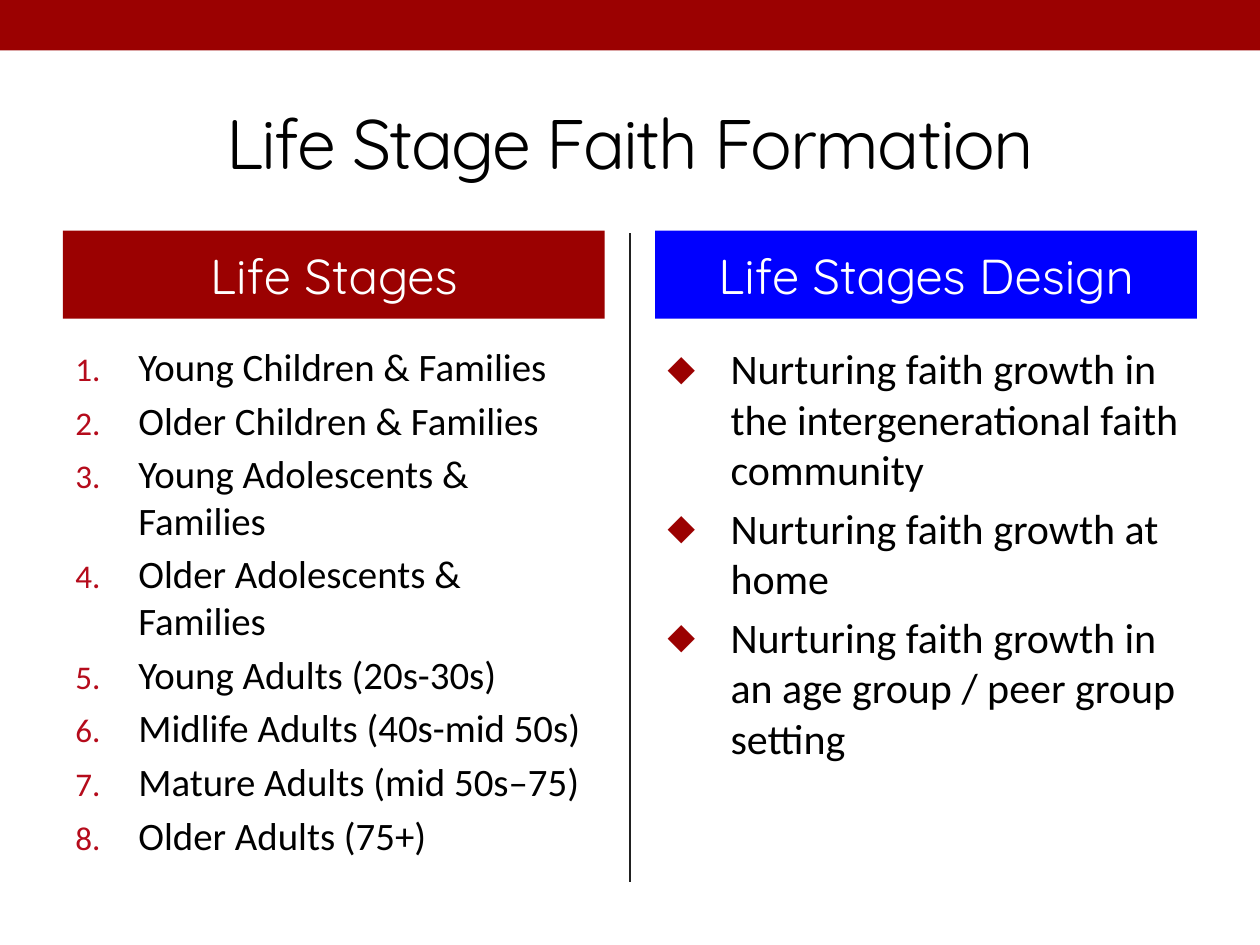
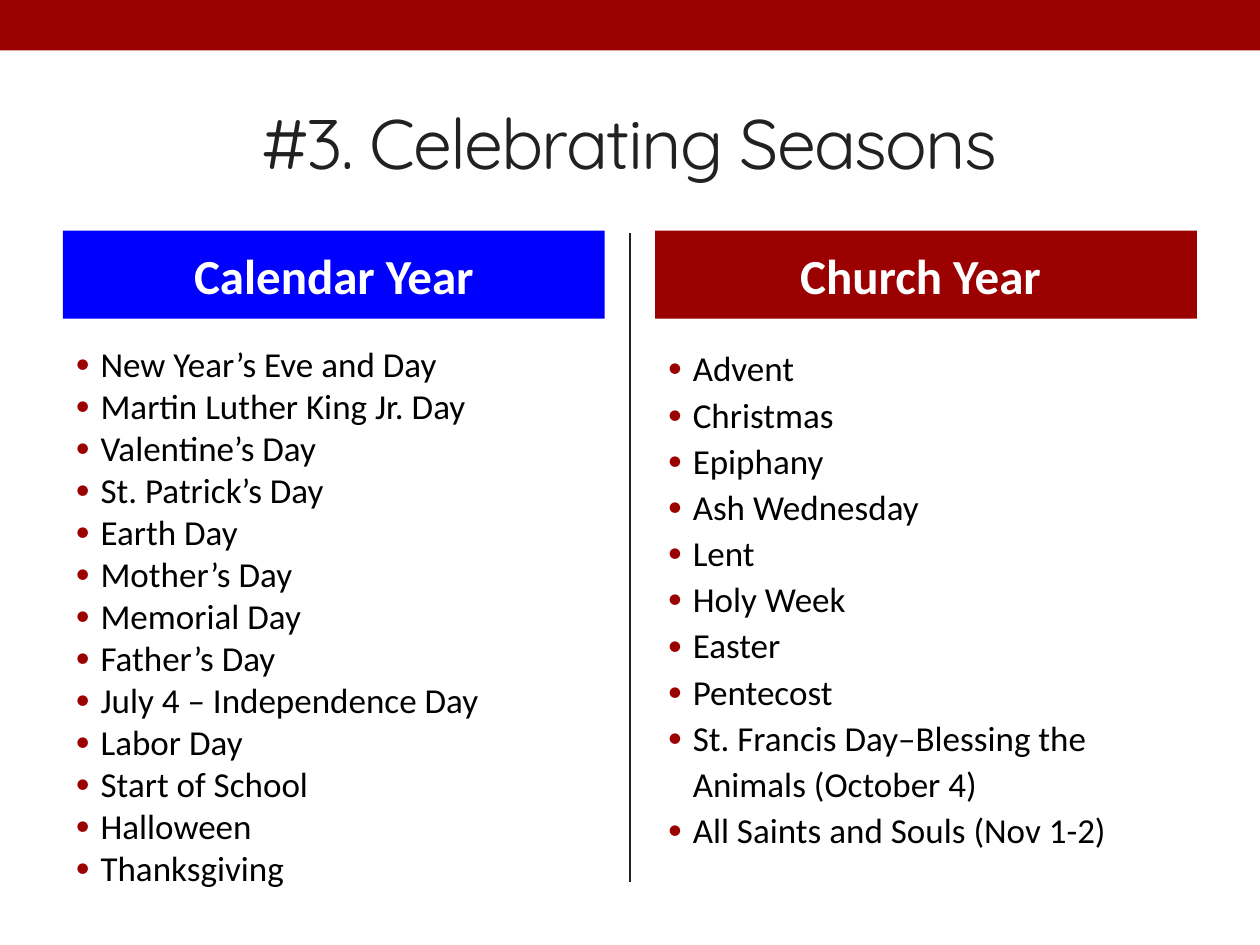
from lxml import etree
from pptx import Presentation
from pptx.dml.color import RGBColor
from pptx.enum.shapes import MSO_CONNECTOR, MSO_SHAPE
from pptx.enum.text import MSO_ANCHOR, PP_ALIGN
from pptx.oxml.ns import qn
from pptx.util import Inches, Pt

RED = RGBColor(0x9B, 0x01, 0x01)
NUMBER_RED = RGBColor(0xB5, 0x0B, 0x1B)
BLUE = RGBColor(0x00, 0x00, 0xFF)
INK = RGBColor(0x21, 0x21, 0x21)
BLACK = RGBColor(0x00, 0x00, 0x00)
WHITE = RGBColor(0xFF, 0xFF, 0xFF)
RECT, STRAIGHT = MSO_SHAPE.RECTANGLE, MSO_CONNECTOR.STRAIGHT
MIDDLE, CENTER = MSO_ANCHOR.MIDDLE, PP_ALIGN.CENTER
BODY_FONT, DISPLAY_FONT = "Calibri", "Quicksand"
TITLE_ONLY = 5
SLIDE_W, SLIDE_H = 10, 7.5
MARGIN, COLUMN_W, COLUMN_TOP = 0.5, 4.3, 1.83
HEADER_H, LIST_OFFSET, LIST_H = 0.7, 0.84, 4.32

LIFE_STAGES = [
    "Young Children & Families", "Older Children & Families",
    "Young Adolescents & Families", "Older Adolescents & Families",
    "Young Adults (20s-30s)", "Midlife Adults (40s-mid 50s)",
    "Mature Adults (mid 50s–75)", "Older Adults (75+)",
]
DESIGN = [
    "Nurturing faith growth in the intergenerational faith community",
    "Nurturing faith growth at home",
    "Nurturing faith growth in an age group / peer group setting",
]
CALENDAR_YEAR = [
    "New Year’s Eve and Day", "Martin Luther King Jr. Day", "Valentine’s Day",
    "St. Patrick’s Day", "Earth Day", "Mother’s Day", "Memorial Day",
    "Father’s Day", "July 4 – Independence Day", "Labor Day",
    "Start of School", "Halloween", "Thanksgiving",
]
CHURCH_YEAR = [
    "Advent", "Christmas", "Epiphany", "Ash Wednesday", "Lent", "Holy Week",
    "Easter", "Pentecost", "St. Francis Day–Blessing the Animals (October 4)",
    "All Saints and Souls (Nov 1-2)",
]


def add_run(p, text, size, color, font=BODY_FONT, bold=False):
    """Add one formatted run to a paragraph."""
    r = p.add_run()
    r.text = text
    r.font.size, r.font.name, r.font.bold = Pt(size), font, bold
    r.font.color.rgb = color
    return r


def add_rect(s, left, top, width, height, color):
    """Add a plain filled rectangle without outline."""
    sp = s.shapes.add_shape(RECT, Inches(left), Inches(top), Inches(width), Inches(height))
    sp.shadow.inherit = False
    sp.fill.solid()
    sp.fill.fore_color.rgb = color
    sp.line.fill.background()
    return sp


def set_bullet(p, bullet, color, indent):
    """Give a paragraph a hanging bullet, or a number when bullet is None."""
    pPr = p._p.get_or_add_pPr()
    pPr.set("marL", str(Inches(indent)))
    pPr.set("indent", str(-Inches(indent)))
    clr = etree.SubElement(pPr, qn("a:buClr"))
    etree.SubElement(clr, qn("a:srgbClr"), val=str(color))
    etree.SubElement(pPr, qn("a:buSzPct"), val="85000")
    etree.SubElement(pPr, qn("a:buFont"), typeface=BODY_FONT)
    if bullet:
        etree.SubElement(pPr, qn("a:buChar"), char=bullet)
    else:
        etree.SubElement(pPr, qn("a:buAutoNum"), type="arabicPeriod")


def add_frame(s, title, color):
    """Add the top band, the centre divider and the title."""
    add_rect(s, 0, 0, SLIDE_W, 0.4, RED)
    mid = Inches(SLIDE_W / 2)
    line = s.shapes.add_connector(STRAIGHT, mid, Inches(1.85), mid, Inches(7))
    line.line.color.rgb = INK
    line.line.width = Pt(1.5)
    etree.SubElement(line._element.spPr, qn("a:effectLst"))
    sp = s.shapes.title
    sp.left, sp.top = Inches(MARGIN), Inches(0.58)
    sp.width, sp.height = Inches(SLIDE_W - 2 * MARGIN), Inches(1.08)
    tf = sp.text_frame
    tf.vertical_anchor = MIDDLE
    p = tf.paragraphs[0]
    p.alignment = CENTER
    r = add_run(p, title, 40, color, DISPLAY_FONT)
    r.font._element.set("spc", "-100")


def add_header(s, left, text, fill, font, bold):
    """Add the coloured heading of a column."""
    sp = add_rect(s, left, COLUMN_TOP, COLUMN_W, HEADER_H, fill)
    tf = sp.text_frame
    tf.vertical_anchor = MIDDLE
    p = tf.paragraphs[0]
    p.alignment = CENTER
    add_run(p, text, 28, WHITE, font, bold)


def add_list(s, left, items, size, bullet, color=RED, indent=0.2,
             space=0, spacing=None, height=LIST_H):
    """Add the bulleted or numbered list below a column heading."""
    sp = s.shapes.add_textbox(Inches(left), Inches(COLUMN_TOP + LIST_OFFSET),
                              Inches(COLUMN_W), Inches(height))
    tf = sp.text_frame
    tf.word_wrap = True
    for i, item in enumerate(items):
        p = tf.paragraphs[0] if i == 0 else tf.add_paragraph()
        set_bullet(p, bullet, color, indent)
        p.space_before = Pt(space if i else 0)
        if spacing:
            p.line_spacing = spacing
        add_run(p, item, size, BLACK)


def add_two_column_slide(prs, title, title_color, font, bold, columns):
    """Add a slide with a title and two headed lists."""
    s = prs.slides.add_slide(prs.slide_layouts[TITLE_ONLY])
    add_frame(s, title, title_color)
    lefts = (MARGIN, SLIDE_W - MARGIN - COLUMN_W)
    for left, (heading, fill, options) in zip(lefts, columns):
        add_header(s, left, heading, fill, font, bold)
        add_list(s, left, **options)


def main():
    """Build and save the presentation."""
    prs = Presentation()
    prs.slide_width, prs.slide_height = Inches(SLIDE_W), Inches(SLIDE_H)
    add_two_column_slide(prs, "Life Stage Faith Formation", BLACK, DISPLAY_FONT, False, [
        ("Life Stages", RED, dict(items=LIFE_STAGES, size=22.2, bullet=None,
                                  color=NUMBER_RED, indent=0.5, space=4, height=4.61)),
        ("Life Stages Design", BLUE, dict(items=DESIGN, size=24, bullet="◆",
                                          indent=0.5, space=4.8)),
    ])
    add_two_column_slide(prs, "#3. Celebrating Seasons", INK, BODY_FONT, True, [
        ("Calendar Year", BLUE, dict(items=CALENDAR_YEAR, size=20, bullet="•")),
        ("Church Year ", RED, dict(items=CHURCH_YEAR, size=20, bullet="•", spacing=1.1)),
    ])
    prs.save("out.pptx")


if __name__ == "__main__":
    main()
